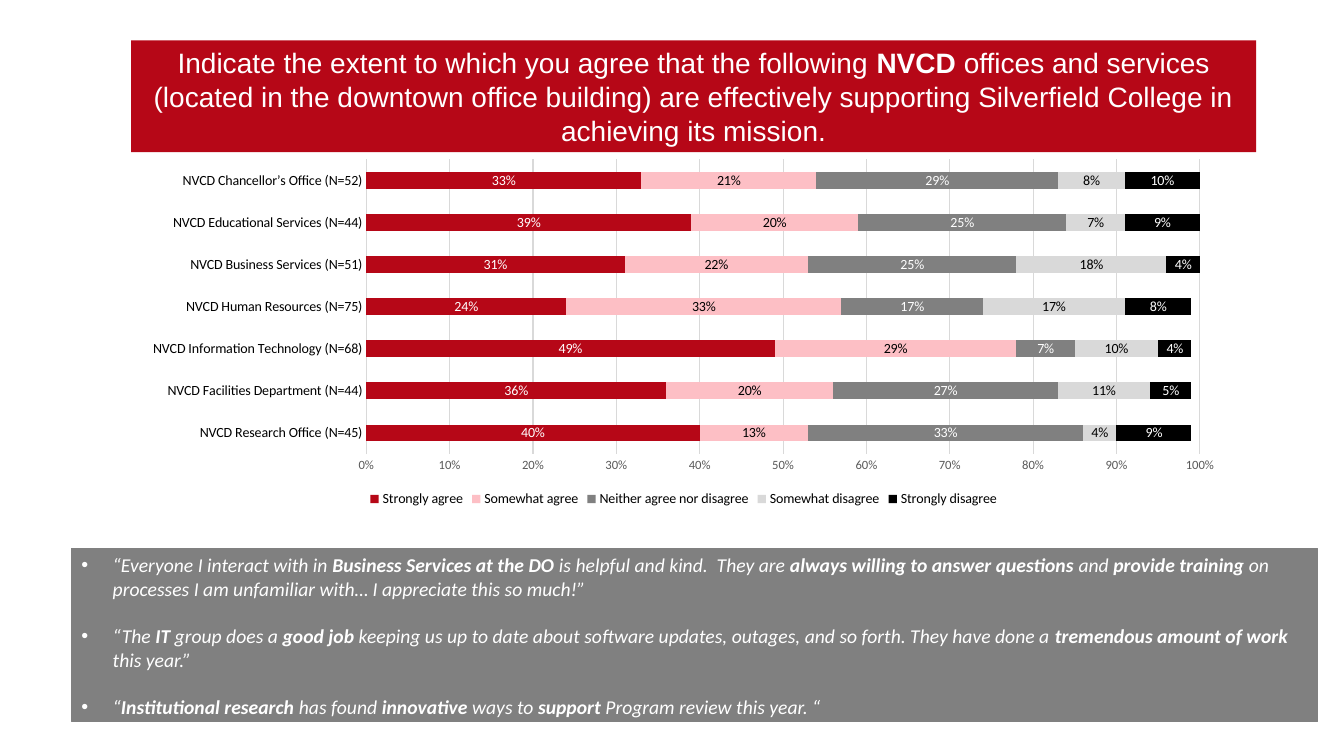
"""Build the slide on how district offices support the college."""
from pptx import Presentation
from pptx.chart.data import CategoryChartData
from pptx.dml.color import RGBColor
from pptx.enum.chart import XL_CHART_TYPE, XL_LABEL_POSITION, XL_LEGEND_POSITION, XL_TICK_MARK
from pptx.enum.shapes import MSO_SHAPE
from pptx.enum.text import MSO_ANCHOR, MSO_AUTO_SIZE, PP_ALIGN
from pptx.oxml import parse_xml
from pptx.oxml.ns import nsdecls
from pptx.util import Inches, Pt

STACK = XL_CHART_TYPE.BAR_STACKED
CENTER = XL_LABEL_POSITION.CENTER
BOTTOM = XL_LEGEND_POSITION.BOTTOM
NO_TICK = XL_TICK_MARK.NONE
RECT = MSO_SHAPE.RECTANGLE
MIDDLE = MSO_ANCHOR.MIDDLE
NO_FIT = MSO_AUTO_SIZE.NONE
MID = PP_ALIGN.CENTER

RED, GRAY, PALE = "B60717", "808080", "D9D9D9"
WHITE, BLACK = "FFFFFF", "000000"

TITLE = (
    "Indicate the extent to which you agree that the following *NVCD* offices and services "
    "(located in the downtown office building) are effectively supporting Silverfield College "
    "in achieving its mission."
)
QUOTES = [
    "“Everyone I interact with in *Business Services at the DO *is helpful and kind.  They are "
    "*always willing to answer questions *and *provide training *on processes I am unfamiliar "
    "with… I appreciate this so much!”",
    "“The *IT* group does a *good job* keeping us up to date about software updates, outages, "
    "and so forth. They have done a *tremendous amount of work *this year.”",
    "“*Institutional research *has found *innovative* ways to *support *Program review this year. “",
]
OFFICES = [
    "NVCD Research Office (N=45)",
    "NVCD Facilities Department (N=44)",
    "NVCD Information Technology (N=68)",
    "NVCD Human Resources (N=75)",
    "NVCD Business Services (N=51)",
    "NVCD Educational Services (N=44)",
    "NVCD Chancellor’s Office (N=52)",
]
SERIES = [
    ("Strongly agree", RED, WHITE, (0.4, 0.36, 0.49, 0.24, 0.31, 0.39, 0.33)),
    ("Somewhat agree", "FDBFC5", BLACK, (0.13, 0.2, 0.29, 0.33, 0.22, 0.2, 0.21)),
    ("Neither agree nor disagree", GRAY, WHITE, (0.33, 0.27, 0.07, 0.17, 0.25, 0.25, 0.29)),
    ("Somewhat disagree", PALE, BLACK, (0.04, 0.11, 0.1, 0.17, 0.18, 0.07, 0.08)),
    ("Strongly disagree", BLACK, WHITE, (0.09, 0.05, 0.04, 0.08, 0.04, 0.09, 0.1)),
]


def paint(color, code):
    color.rgb = RGBColor.from_string(code)


def fill(part, code):
    part.fill.solid()
    paint(part.fill.fore_color, code)


def style(font, size, code, face="Calibri"):
    font.size = Pt(size)
    font.name = face
    paint(font.color, code)


def place(shape, *box):
    shape.left, shape.top, shape.width, shape.height = map(Inches, box)


def write(para, text, size, face, italic=False):
    for i, part in enumerate(text.split("*")):
        run = para.add_run()
        run.text = part
        style(run.font, size, WHITE, face)
        run.font.bold = i % 2 == 1
        run.font.italic = italic


def add_title(slide):
    title = slide.shapes.title
    place(title, 1.3, 0.4, 11.16, 1.11)
    fill(title, RED)
    frame = title.text_frame
    frame.word_wrap = True
    frame.auto_size = NO_FIT
    frame.vertical_anchor = MIDDLE
    frame.paragraphs[0].alignment = MID
    write(frame.paragraphs[0], TITLE, 20, "Arial")


def add_quotes(slide):
    panel = slide.shapes.add_shape(RECT, *map(Inches, (0.71, 5.44, 12.36, 1.72)))
    panel.shadow.inherit = False
    fill(panel, GRAY)
    paint(panel.line.color, GRAY)
    panel.line.width = Pt(0.75)
    box = slide.shapes.add_textbox(*map(Inches, (0.71, 5.44, 12.28, 1.75)))
    frame = box.text_frame
    frame.word_wrap = True
    for i, quote in enumerate(QUOTES):
        para = frame.add_paragraph() if i else frame.paragraphs[0]
        para.space_before = Pt(17 if i else 0)
        props = para._p.get_or_add_pPr()
        props.set("marL", str(Inches(0.31)))
        props.set("indent", str(Inches(-0.31)))
        props.append(parse_xml(f'<a:buFont {nsdecls("a")} typeface="Arial"/>'))
        props.append(parse_xml(f'<a:buChar {nsdecls("a")} char="•"/>'))
        write(para, quote, 14, "Calibri", True)


def add_bars(slide):
    data = CategoryChartData(number_format="0%")
    data.categories = OFFICES
    for name, _, _, vals in SERIES:
        data.add_series(name, vals)
    box = map(Inches, (1.3, 1.51, 10.96, 3.56))
    chart = slide.shapes.add_chart(STACK, *box, data).chart
    style(chart.font, 10, BLACK)
    chart.has_title = False
    chart.has_legend = True
    chart.legend.position = BOTTOM
    chart.legend.include_in_layout = False
    style(chart.legend.font, 10, BLACK)

    cat, val = chart.category_axis, chart.value_axis
    for axis, size, code in ((cat, 10, BLACK), (val, 9, "595959")):
        axis.major_tick_mark = axis.minor_tick_mark = NO_TICK
        style(axis.tick_labels.font, size, code)
    val.minimum_scale, val.maximum_scale, val.major_unit = 0, 1, 0.1
    val.tick_labels.number_format = "0%"
    val.tick_labels.number_format_is_linked = False
    val.format.line.fill.background()
    val.has_major_gridlines = True
    for line in (cat.format.line, val.major_gridlines.format.line):
        paint(line.color, PALE)
        line.width = Pt(0.75)

    plot = chart.plots[0]
    plot.gap_width, plot.overlap = 150, 100
    plot.vary_by_categories = False
    for bar, (_, code, ink, _) in zip(plot.series, SERIES):
        fill(bar.format, code)
        labels = bar.data_labels
        labels.show_value = True
        labels.position = CENTER
        labels.number_format = "0%"
        labels.number_format_is_linked = False
        style(labels.font, 10, ink)


def main():
    deck = Presentation()
    deck.slide_width, deck.slide_height = Inches(13.33), Inches(7.5)
    slide = deck.slides.add_slide(deck.slide_layouts[5])
    add_title(slide)
    add_quotes(slide)
    add_bars(slide)
    deck.save("out.pptx")


if __name__ == "__main__":
    main()
